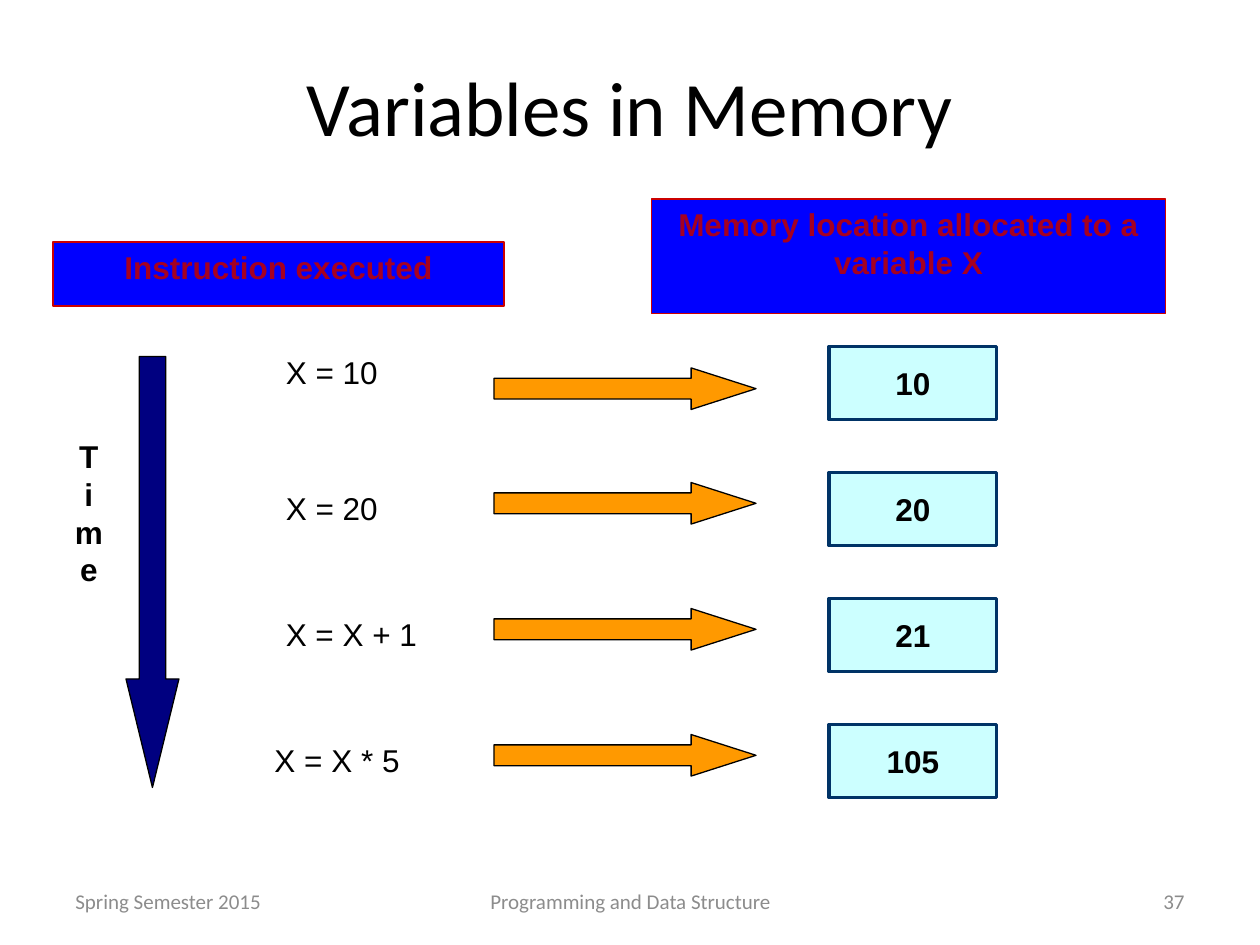
from dataclasses import dataclass
from typing import Optional

from pptx import Presentation
from pptx.dml.color import RGBColor
from pptx.enum import shapes, text
from pptx.util import Inches, Pt


@dataclass(frozen=True)
class Theme:
    ink: str = "000000"
    muted: str = "8C8C8C"
    header_fill: str = "0000FF"
    header_line: str = "CC0000"
    header_ink: str = "A50021"
    cell_fill: str = "CCFFFF"
    cell_line: str = "003366"
    step_arrow: str = "FF9900"
    time_arrow: str = "000080"
    heading_font: str = "Calibri"
    body_font: str = "Arial"
    title_size: int = 44
    body_size: int = 18
    footer_size: int = 12
    thin: float = 0.75
    thick: float = 2


@dataclass(frozen=True)
class Box:
    left: float
    top: float
    width: float
    height: float

    def lengths(self) -> tuple:
        return tuple(map(Inches, (self.left, self.top, self.width, self.height)))


@dataclass(frozen=True)
class Step:
    instruction: str
    value: str
    instruction_box: Box
    arrow_top: float


@dataclass(frozen=True)
class Label:
    wording: str
    box: Box
    align: text.PP_ALIGN


THEME = Theme()
LEFT, CENTER, RIGHT = text.PP_ALIGN.LEFT, text.PP_ALIGN.CENTER, text.PP_ALIGN.RIGHT
TOP, MIDDLE = text.MSO_ANCHOR.TOP, text.MSO_ANCHOR.MIDDLE
KIND = shapes.MSO_SHAPE

STEPS = [
    Step("X = 10", "10", Box(2.17, 2.75, 1.58, 0.5), 2.92),
    Step("X = 20", "20", Box(2.17, 3.83, 1.58, 0.5), 3.83),
    Step("X = X + 1", "21", Box(2.17, 4.83, 1.67, 0.5), 4.83),
    Step("X = X * 5", "105", Box(2.08, 5.83, 1.58, 0.5), 5.83),
]
HEADERS = [
    Label("Memory location allocated to a variable X", Box(5.17, 1.58, 4.08, 0.91), CENTER),
    Label("Instruction executed", Box(0.42, 1.92, 3.58, 0.51), CENTER),
]
FOOTERS = [
    Label("Spring Semester 2015", Box(0.5, 6.95, 2.33, 0.4), LEFT),
    Label("Programming and Data Structure", Box(3.42, 6.95, 3.17, 0.4), CENTER),
    Label("37", Box(7.17, 6.95, 2.33, 0.4), RIGHT),
]
CELL_TOP, CELL_PITCH = 2.75, 1


def write(shape, wording: str, align=LEFT, anchor=TOP, size: int = THEME.body_size,
          font: str = THEME.body_font, color: str = THEME.ink,
          bold: bool = False, wrap: bool = True) -> None:
    frame = shape.text_frame
    frame.text = wording
    frame.word_wrap = wrap
    frame.vertical_anchor = anchor
    for paragraph in frame.paragraphs:
        paragraph.alignment = align
        paragraph.font.size = Pt(size)
        paragraph.font.name = font
        paragraph.font.bold = bold
        paragraph.font.color.rgb = RGBColor.from_string(color)


def draw_shape(slide, kind, box: Box, fill: str, line: str = THEME.ink,
               weight: float = THEME.thin, head: Optional[float] = None):
    shape = slide.shapes.add_shape(kind, *box.lengths())
    shape.shadow.inherit = False
    shape.fill.solid()
    shape.fill.fore_color.rgb = RGBColor.from_string(fill)
    shape.line.color.rgb = RGBColor.from_string(line)
    shape.line.width = Pt(weight)
    if head is not None:
        shape.adjustments[0] = 0.5
        shape.adjustments[1] = head
    return shape


def draw_text(slide, wording: str, box: Box, **style) -> None:
    write(slide.shapes.add_textbox(*box.lengths()), wording, **style)


def draw_title(slide, wording: str, box: Box) -> None:
    title = slide.shapes.title
    title.left, title.top, title.width, title.height = box.lengths()
    write(title, wording, CENTER, MIDDLE, THEME.title_size, THEME.heading_font)


def draw_header(slide, header: Label) -> None:
    panel = draw_shape(slide, KIND.RECTANGLE, header.box, THEME.header_fill, THEME.header_line)
    write(panel, header.wording, header.align, color=THEME.header_ink, bold=True)


def draw_step(slide, index: int, step: Step) -> None:
    cell_box = Box(6.58, CELL_TOP + index * CELL_PITCH, 1.33, 0.58)
    cell = draw_shape(slide, KIND.RECTANGLE, cell_box, THEME.cell_fill,
                      THEME.cell_line, THEME.thick)
    write(cell, step.value, CENTER, MIDDLE, bold=True, wrap=False)
    draw_text(slide, step.instruction, step.instruction_box)
    draw_shape(slide, KIND.RIGHT_ARROW, Box(3.92, step.arrow_top, 2.08, 0.33),
               THEME.step_arrow, head=1.56)


def main() -> None:
    deck = Presentation()
    deck.slide_width, deck.slide_height = Inches(10), Inches(7.5)
    slide = deck.slides.add_slide(deck.slide_layouts.get_by_name("Title Only"))

    draw_title(slide, "Variables in Memory", Box(0.75, 0.42, 8.5, 0.83))
    for footer in FOOTERS:
        draw_text(slide, footer.wording, footer.box, align=footer.align, anchor=MIDDLE,
                  size=THEME.footer_size, font=THEME.heading_font, color=THEME.muted)
    for header in HEADERS:
        draw_header(slide, header)
    for index, step in enumerate(STEPS):
        draw_step(slide, index, step)
    draw_shape(slide, KIND.DOWN_ARROW, Box(1, 2.83, 0.42, 3.42), THEME.time_arrow, head=2.05)
    draw_text(slide, "\n".join("Time"), Box(0.33, 3.42, 0.75, 2.3), align=CENTER, bold=True)

    deck.save("out.pptx")


if __name__ == "__main__":
    main()
